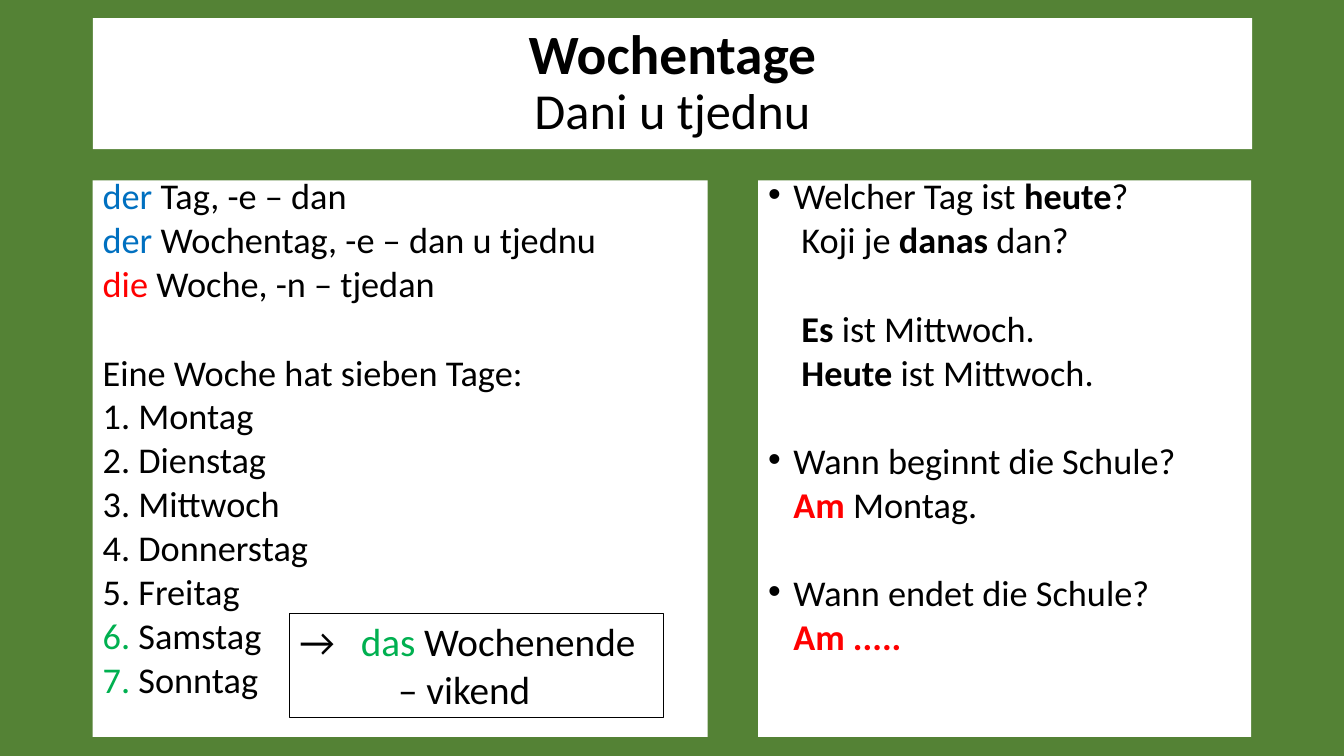
"""Builds a German vocabulary slide about the days of the week."""
from dataclasses import dataclass

from lxml import etree
from pptx import Presentation
from pptx import util as u
from pptx.dml.color import RGBColor
from pptx.enum import shapes, text
from pptx.oxml.ns import qn


@dataclass(frozen=True)
class Theme:
    font: str = "Calibri"
    background: str = "548235"
    panel: str = "FFFFFF"
    ink: str = "000000"
    masculine: str = "0070C0"
    feminine: str = "FF0000"
    neuter: str = "00B050"
    heading: float = 39.6
    subheading: float = 36
    body: float = 25.9
    note: float = 28
    gap: float = 9.6
    section_gap: float = 41.35


class SlideBuilder:
    def __init__(self, presentation, theme):
        self.theme = theme
        self.slide = presentation.slides.add_slide(presentation.slide_layouts[5])
        fill = self.slide.background.fill
        fill.solid()
        fill.fore_color.rgb = RGBColor.from_string(theme.background)

    def place(self, shape, box):
        for name, value in zip(("left", "top", "width", "height"), box):
            setattr(shape, name, u.Inches(value))

    def paint(self, shape):
        shape.fill.solid()
        shape.fill.fore_color.rgb = RGBColor.from_string(self.theme.panel)

    def frame(self, shape, anchor):
        settings = {"word_wrap": True, "auto_size": text.MSO_AUTO_SIZE.NONE,
                    "vertical_anchor": anchor}
        for name, value in settings.items():
            setattr(shape.text_frame, name, value)
        return shape.text_frame

    def run(self, paragraph, words, size, color=None, bold=False):
        run = paragraph.add_run()
        run.text = words
        settings = {"name": self.theme.font, "size": u.Pt(size), "bold": bold}
        for name, value in settings.items():
            setattr(run.font, name, value)
        run.font.color.rgb = RGBColor.from_string(color or self.theme.ink)

    def indent(self, paragraph, left, hanging=0, bullet=False):
        properties = paragraph._p.get_or_add_pPr()
        properties.set("marL", str(u.Inches(left)))
        properties.set("indent", str(-u.Inches(hanging)))
        if bullet:
            font = etree.SubElement(properties, qn("a:buFont"))
            font.set("typeface", "Arial")
            etree.SubElement(properties, qn("a:buChar")).set("char", "•")

    def title(self, box, heading, subheading):
        title = self.slide.shapes.title
        self.place(title, box)
        self.paint(title)
        paragraph = self.frame(title, text.MSO_ANCHOR.MIDDLE).paragraphs[0]
        paragraph.alignment = text.PP_ALIGN.CENTER
        paragraph.line_spacing = 0.9
        self.run(paragraph, heading, self.theme.heading, bold=True)
        paragraph.add_line_break()
        self.run(paragraph, subheading, self.theme.subheading)

    def panel(self, box, lines):
        panel = self.slide.shapes.add_textbox(*map(u.Inches, box))
        self.paint(panel)
        frame = self.frame(panel, text.MSO_ANCHOR.TOP)
        for index, (layout, runs) in enumerate(lines):
            paragraph = frame.add_paragraph() if index else frame.paragraphs[0]
            gap = self.theme.section_gap if layout.get("section") else self.theme.gap
            settings = {"line_spacing": 0.7, "space_before": u.Pt(gap)}
            for name, value in settings.items():
                setattr(paragraph, name, value)
            bullet = layout.get("bullet", False)
            self.indent(paragraph, layout.get("left", 0), 0.25 if bullet else 0, bullet)
            for words, *style in runs:
                self.run(paragraph, words, self.theme.body, *style)

    def note(self, box, lines):
        note = self.slide.shapes.add_shape(shapes.MSO_SHAPE.RECTANGLE, *map(u.Inches, box))
        note.shadow.inherit = False
        note.fill.background()
        note.line.color.rgb = RGBColor.from_string(self.theme.ink)
        note.line.width = u.Pt(0.25)
        frame = self.frame(note, text.MSO_ANCHOR.TOP)
        for index, (left, hanging, runs) in enumerate(lines):
            paragraph = frame.add_paragraph() if index else frame.paragraphs[0]
            paragraph.alignment = text.PP_ALIGN.LEFT
            self.indent(paragraph, left, hanging)
            for words, *style in runs:
                self.run(paragraph, words, self.theme.note, *style)


def main():
    theme = Theme()
    presentation = Presentation()
    presentation.slide_width = u.Inches(13.33)
    presentation.slide_height = u.Inches(7.5)
    builder = SlideBuilder(presentation, theme)

    builder.title((0.92, 0.18, 11.5, 1.3), "Wochentage", "Dani u tjednu")

    nouns = [("der", " Tag, -e – dan", theme.masculine),
             ("der", " Wochentag, -e – dan u tjednu", theme.masculine),
             ("die", " Woche, -n – tjedan", theme.feminine)]
    vocabulary = [({}, [(article, color), (noun,)]) for article, noun, color in nouns]
    vocabulary.append(({"section": True}, [("Eine Woche hat sieben Tage:",)]))
    days = ["Montag", "Dienstag", "Mittwoch", "Donnerstag", "Freitag", "Samstag", "Sonntag"]
    for number, day in enumerate(days, 1):
        color = theme.neuter if number > 5 else theme.ink
        vocabulary.append(({}, [(f"{number}.", color), (f" {day}",)]))
    builder.panel((0.92, 1.79, 6.1, 5.52), vocabulary)

    question = {"left": 0.25, "bullet": True}
    next_question = {**question, "section": True}
    answer = {"left": 0.25}
    reply = {"left": 0.33}
    builder.panel((7.52, 1.79, 4.89, 5.52), [
        (question, [("Welcher Tag ist ",), ("heute", theme.ink, True), ("?",)]),
        (reply, [("Koji je ",), ("danas ", theme.ink, True), ("dan?",)]),
        ({**reply, "section": True}, [("Es", theme.ink, True), (" ist Mittwoch.",)]),
        (reply, [("Heute", theme.ink, True), (" ist Mittwoch.",)]),
        (next_question, [("Wann beginnt die Schule?",)]),
        (answer, [("Am", theme.feminine, True), (" Montag.",)]),
        (next_question, [("Wann endet die Schule?",)]),
        (answer, [("Am .....", theme.feminine, True)]),
    ])

    builder.note((2.87, 6.08, 3.71, 1.04), [
        (0.61, 0.61, [("→\t",), ("das", theme.neuter), (" Wochenende",)]),
        (0.98, 0, [("– vikend",)]),
    ])
    presentation.save("out.pptx")


if __name__ == "__main__":
    main()
